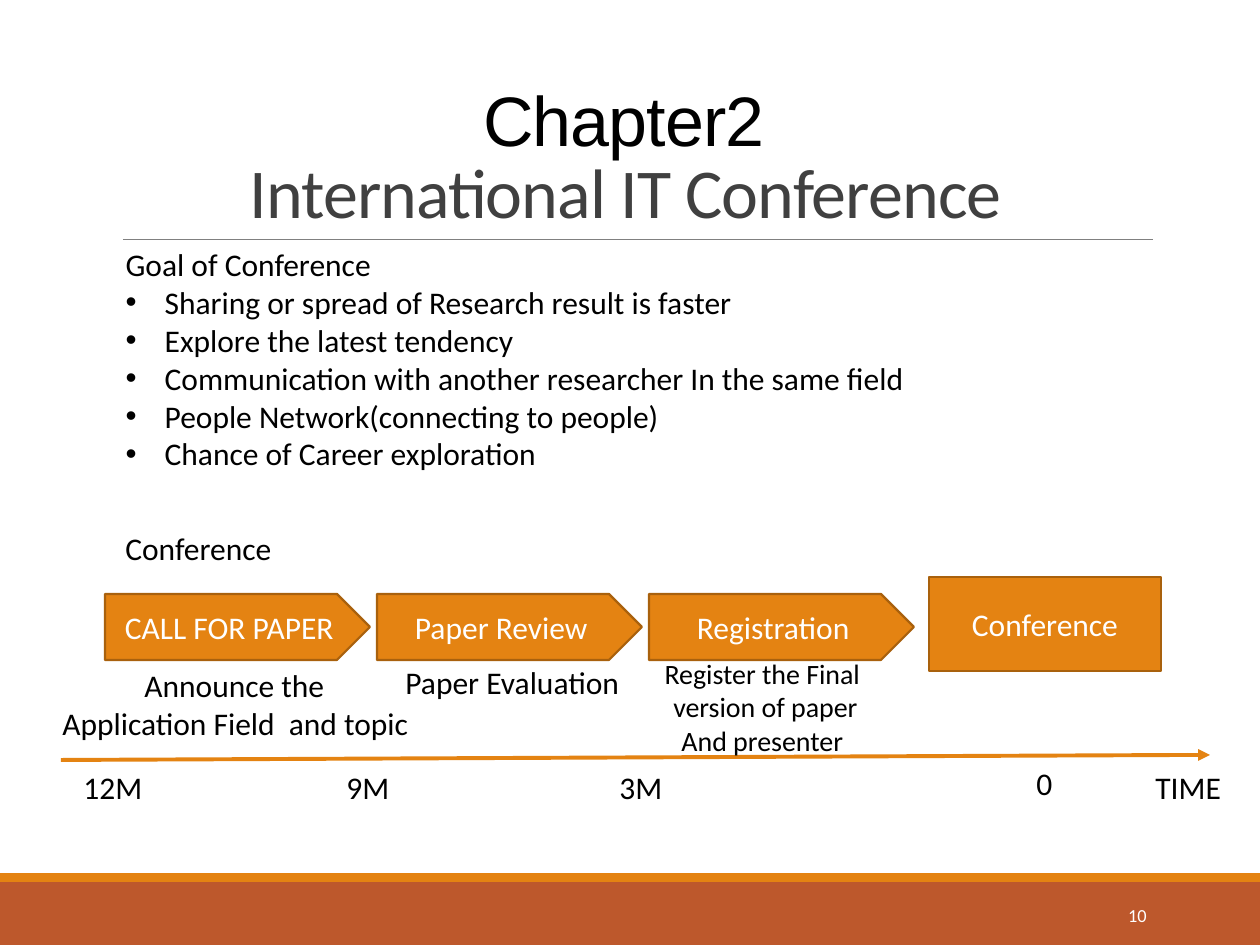
from lxml import etree
from pptx import Presentation
from pptx.dml.color import RGBColor
from pptx.enum.shapes import MSO_CONNECTOR as LINE, MSO_SHAPE as SHAPE
from pptx.enum.text import MSO_ANCHOR as ANCHOR, MSO_AUTO_SIZE as FIT, PP_ALIGN as ALIGN
from pptx.oxml.ns import qn
from pptx.util import Emu, Inches, Pt

COLORS = {"rust": "BD582C", "orange": "E48312", "edge": "A9610D", "rule": "808080",
          "heading": "404040", "black": "000000", "white": "FFFFFF"}
TITLE_LINES = [("Chapter2 ", "Arial", "black"),
               ("International IT Conference ", "Calibri", "heading")]
GOAL_HEADING = "Goal of Conference"
GOALS = ["Sharing or spread of Research result is faster",
         "Explore the latest tendency",
         "Communication with another researcher In the same field",
         "People Network(connecting to people)",
         "Chance of Career exploration"]
STEPS = ["CALL FOR PAPER", "Paper Review", "Registration"]
STEP_BOX, STEP_PITCH = (105, 594, 265, 66), 272
L, C, R = ALIGN.LEFT, ALIGN.CENTER, ALIGN.RIGHT
LABELS = [
    ((113, 523, 174, 50), 18, [("Conference", L)]),
    ((50, 660, 376, 127), 18, [("Announce the ", C), ("Application Field  and topic", L)]),
    ((393, 657, 243, 50), 18, [("Paper Evaluation", L)]),
    ((650, 650, 231, 115), 16, [("Register the Final ", C), ("version of paper", C),
                                ("And presenter ", C)]),
    ((71, 762, 84, 50), 18, [("12M", L)]),
    ((334, 762, 69, 50), 18, [("9M", L)]),
    ((607, 762, 69, 50), 18, [("3M", L)]),
    ((1024, 758, 42, 50), 18, [("0", L)]),
    ((1143, 762, 92, 50), 18, [("TIME", L)]),
]


def px(*values):
    return [Emu(round(value * 914400 / 126)) for value in values]


def rgb(name):
    return RGBColor.from_string(COLORS[name])


def write(paragraph, text, size=18, color="black", font="Calibri", align=L):
    paragraph.alignment = align
    run = paragraph.add_run()
    run.text = text
    run.font.size, run.font.name = Pt(size), font
    run.font.color.rgb = rgb(color)
    return run


def place(shape, box):
    shape.left, shape.top, shape.width, shape.height = px(*box)


def add_block(kind, box, fill, edge=None, text=None):
    block = slide.shapes.add_shape(kind, *px(*box))
    block.shadow.inherit = False
    block.fill.solid()
    block.fill.fore_color.rgb = rgb(fill)
    if edge:
        block.line.color.rgb = rgb(edge)
        block.line.width = Pt(1.25)
    else:
        block.line.fill.background()
    if text:
        block.text_frame.vertical_anchor = ANCHOR.MIDDLE
        write(block.text_frame.paragraphs[0], text, color="white", align=C)


def add_line(ends, color, width, arrow=False):
    line = slide.shapes.add_connector(LINE.STRAIGHT, *px(*ends))
    line.line.color.rgb = rgb(color)
    line.line.width = Pt(width)
    if arrow:
        etree.SubElement(line.line._get_or_add_ln(), qn("a:tailEnd"), type="triangle")
    etree.SubElement(line._element.spPr, qn("a:effectLst"))


def add_label(box, size, lines, color="black"):
    frame = slide.shapes.add_textbox(*px(*box)).text_frame
    frame.word_wrap = False
    for i, (text, align) in enumerate(lines):
        paragraph = frame.add_paragraph() if i else frame.paragraphs[0]
        write(paragraph, text, size, color, align=align)
    return frame


def set_bullet(paragraph, bulleted):
    props = paragraph._p.get_or_add_pPr()
    indent = Inches(0.31) if bulleted else 0
    props.set("marL", str(indent))
    props.set("indent", str(-indent))
    if bulleted:
        etree.SubElement(props, qn("a:buFont"), typeface="Arial")
        etree.SubElement(props, qn("a:buChar"), char="•")
    else:
        etree.SubElement(props, qn("a:buNone"))


deck = Presentation()
deck.slide_width, deck.slide_height = px(1260, 945)
slide = deck.slides.add_slide(deck.slide_layouts[1])

add_block(SHAPE.RECTANGLE, (0, 882, 1260, 63), "rust")
add_block(SHAPE.RECTANGLE, (0, 873, 1260, 9), "orange")
add_line((123, 239, 1153, 239), "rule", 0.5)

title = slide.shapes.title
place(title, (113, 39, 1040, 200))
title.text_frame.auto_size = FIT.NONE
title.text_frame.vertical_anchor = ANCHOR.BOTTOM
heading = title.text_frame.paragraphs[0]
heading.line_spacing = 0.85
for i, (text, font, color) in enumerate(TITLE_LINES):
    if i:
        heading.add_line_break()
    run = write(heading, text, 40, color, font, C)
    run.font._element.set("spc", "-50")

goals = slide.placeholders[1]
place(goals, (113, 239, 814, 242))
goals.text_frame.word_wrap = False
goals.text_frame.auto_size = FIT.NONE
for i, text in enumerate([GOAL_HEADING] + GOALS):
    goal = goals.text_frame.add_paragraph() if i else goals.text_frame.paragraphs[0]
    goal.space_before = Pt(0)
    set_bullet(goal, i > 0)
    write(goal, text)

left, top, width, height = STEP_BOX
for i, step in enumerate(STEPS):
    add_block(SHAPE.PENTAGON, (left + i * STEP_PITCH, top, width, height),
              "orange", "edge", step)
add_block(SHAPE.RECTANGLE, (929, 577, 232, 94), "orange", "edge", "Conference")

add_line((61, 760, 1188, 755), "orange", 2.25)
add_line((1160, 755, 1210, 755), "orange", 2.25, arrow=True)
for label in LABELS:
    add_label(*label)

page_number = add_label((1023, 890, 136, 50), 10.5, [("10", R)], "white")
page_number.word_wrap = True
page_number.vertical_anchor = ANCHOR.MIDDLE

deck.save("out.pptx")
